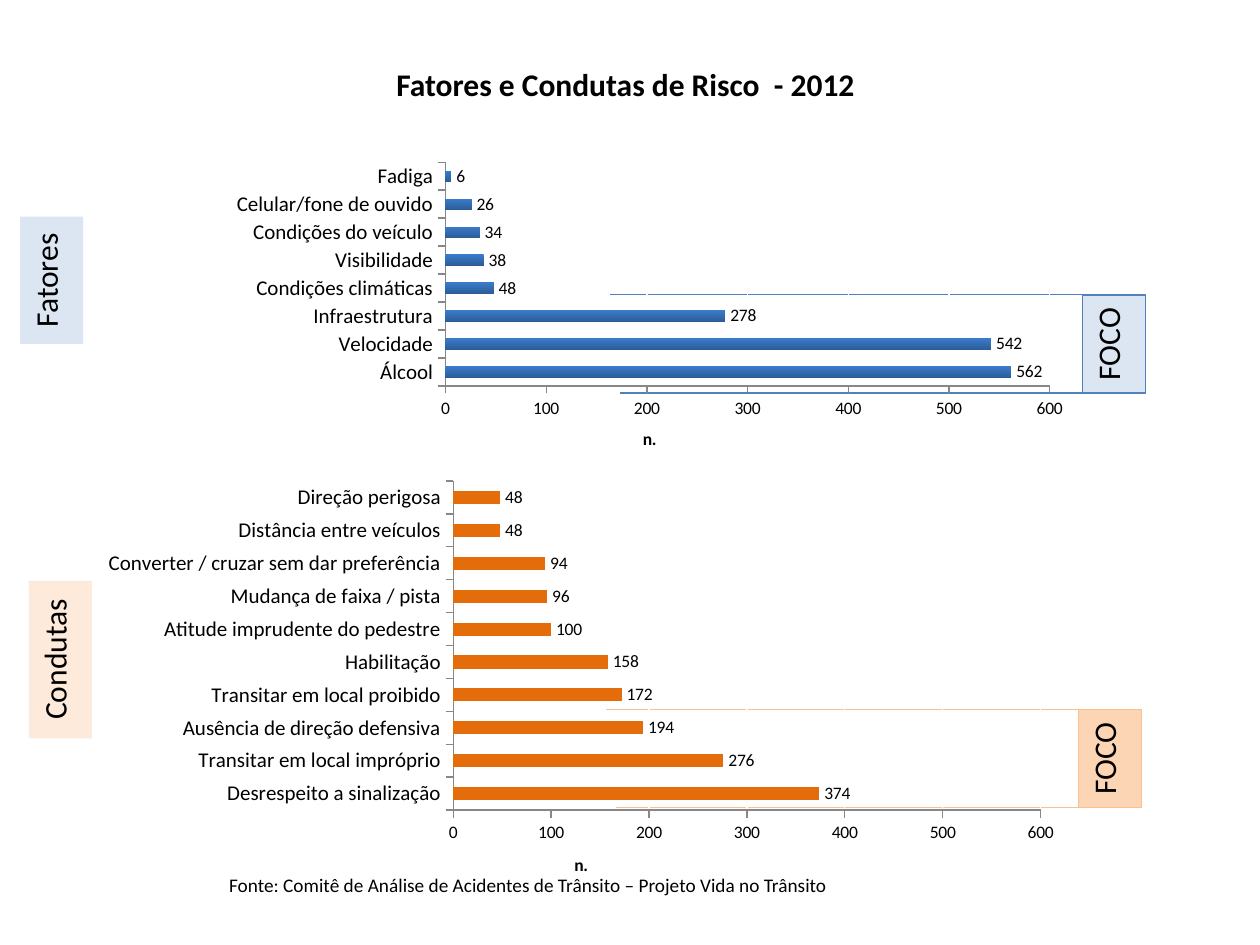
from lxml import etree
from pptx import Presentation
from pptx.chart.data import CategoryChartData
from pptx.dml.color import RGBColor
from pptx.enum import chart as ch, shapes, text
from pptx.oxml import parse_xml
from pptx.oxml.ns import qn
from pptx.util import Inches, Pt

HUES = {
    "ink": "000000", "white": "FFFFFF", "axis": "878787",
    "pale blue": "DCE6F2", "blue": "4F81BD", "bar top": "3A7CCB",
    "bar base": "2C5D98", "pale peach": "FDEADA", "peach": "FCD5B5",
    "apricot": "FAC090", "orange": "E46C0A",
}
FONT = "Calibri"


def hue(name):
    return RGBColor.from_string(HUES[name])


def label(words, box, size, bold=False, align=text.PP_ALIGN.CENTER, fill=None, line=None):
    """Add a text box; a filled one reads from bottom to top."""
    shape = slide.shapes.add_textbox(*[Inches(n) for n in box])
    frame = shape.text_frame
    frame.word_wrap = True
    if fill:
        shape.fill.solid()
        shape.fill.fore_color.rgb = hue(fill)
        frame.margin_top = frame.margin_bottom = Inches(0.05)
        frame._txBody.bodyPr.set("vert", "vert270")
    if line:
        shape.line.color.rgb = hue(line)
        shape.line.width = Pt(0.75)
    para = frame.paragraphs[0]
    para.alignment = align
    run = para.add_run()
    run.text = words
    run.font.name, run.font.size, run.font.bold = FONT, Pt(size), bold
    run.font.color.rgb = hue("ink")


deck = Presentation()
deck.slide_width, deck.slide_height = Inches(10), Inches(7.5)
slide = deck.slides.add_slide(deck.slide_layouts[6])

# Section tags and title
label("Fatores", (0.16, 1.72, 0.5, 1.01), 18, fill="pale blue")
label("Condutas", (0.23, 4.61, 0.5, 1.25), 18, fill="pale peach")
label("Fatores e Condutas de Risco  - 2012", (2.27, 0.47, 5.39, 0.4), 18, bold=True)

# Focus tags, each with a line along the top and the bottom of its bars
for left, top, fill, line in [
    (8.59, 2.34, "pale blue", "blue"),
    (8.56, 5.63, "peach", "apricot"),
]:
    label("FOCO", (left, top, 0.5, 0.78), 18, fill=fill, line=line)
    for dx, dy in [(0, 0), (0.08, 0.78)]:
        rule = slide.shapes.add_connector(
            shapes.MSO_CONNECTOR.STRAIGHT, Inches(left + dx), Inches(top + dy),
            Inches(left + dx - 3.75), Inches(top + dy))
        rule.line.color.rgb = hue(line)
        rule.line.width = Pt(0.75)
        etree.SubElement(rule._element.spPr, qn("a:effectLst"))

# Bar charts: box, plot area as shares of the box, bar colours, values
CHARTS = [
    ((1.72, 1.17, 6.93, 2.45), (0.262, 0.048, 0.692, 0.725), ("bar top", "bar base"), {
        "Álcool": 562, "Velocidade": 542, "Infraestrutura": 278,
        "Condições climáticas": 48, "Visibilidade": 38,
        "Condições do veículo": 34, "Celular/fone de ouvido": 26, "Fadiga": 6,
    }),
    ((0.7, 3.75, 7.81, 3.41), (0.371, 0.02, 0.597, 0.766), ("orange",), {
        "Desrespeito a sinalização": 374, "Transitar em local impróprio": 276,
        "Ausência de direção defensiva": 194, "Transitar em local proibido": 172,
        "Habilitação": 158, "Atitude imprudente do pedestre": 100,
        "Mudança de faixa / pista": 96,
        "Converter / cruzar sem dar preferência": 94,
        "Distância entre veículos": 48, "Direção perigosa": 48,
    }),
]
for box, area, tints, counts in CHARTS:
    data = CategoryChartData()
    data.categories = list(counts)
    data.add_series("n.", list(counts.values()))
    chart = slide.shapes.add_chart(
        ch.XL_CHART_TYPE.BAR_CLUSTERED, *[Inches(n) for n in box], data).chart
    chart.has_title = chart.has_legend = False
    chart.font.name, chart.font.size = FONT, Pt(10)
    chart.font.color.rgb = hue("ink")

    plot = chart.plots[0]
    plot.gap_width = 150
    plot.vary_by_categories = False
    plot.has_data_labels = True
    plot.data_labels.show_value = True
    plot.data_labels.position = ch.XL_LABEL_POSITION.OUTSIDE_END
    fill = plot.series[0].format.fill
    if len(tints) == 2:
        fill.gradient()
        fill.gradient_angle = 270
        for stop, tint in zip(fill.gradient_stops, tints):
            stop.color.rgb = hue(tint)
    else:
        fill.solid()
        fill.fore_color.rgb = hue(tints[0])

    cats, vals = chart.category_axis, chart.value_axis
    for axis in (cats, vals):
        axis.format.line.color.rgb = hue("axis")
        axis.major_tick_mark = ch.XL_TICK_MARK.OUTSIDE
    cats.tick_labels.font.size = Pt(12)
    cats.tick_labels.font.name = FONT
    vals.minimum_scale, vals.maximum_scale, vals.major_unit = 0, 600, 100
    grid = vals.major_gridlines.format.line
    grid.color.rgb = hue("white")
    grid.width = Pt(0.75)
    run = vals.axis_title.text_frame.paragraphs[0].add_run()
    run.text = "n."
    run.font.name, run.font.size, run.font.bold = FONT, Pt(10), True

    # Fixed inner plot area
    parts = "".join(f'<c:{tag} val="{n}"/>' for tag, n in zip("xywh", area))
    place = parse_xml(
        '<c:layout xmlns:c="http://schemas.openxmlformats.org/drawingml/2006/chart">'
        '<c:manualLayout><c:layoutTarget val="inner"/><c:xMode val="edge"/>'
        f'<c:yMode val="edge"/>{parts}</c:manualLayout></c:layout>')
    zone = chart._chartSpace.chart.plotArea
    for old in zone.findall(qn("c:layout")):
        zone.remove(old)
    zone.insert(0, place)

label("Fonte: Comitê de Análise de Acidentes de Trânsito – Projeto Vida no Trânsito",
      (1.72, 6.88, 6.02, 0.29), 11, align=text.PP_ALIGN.LEFT)

deck.save("out.pptx")
